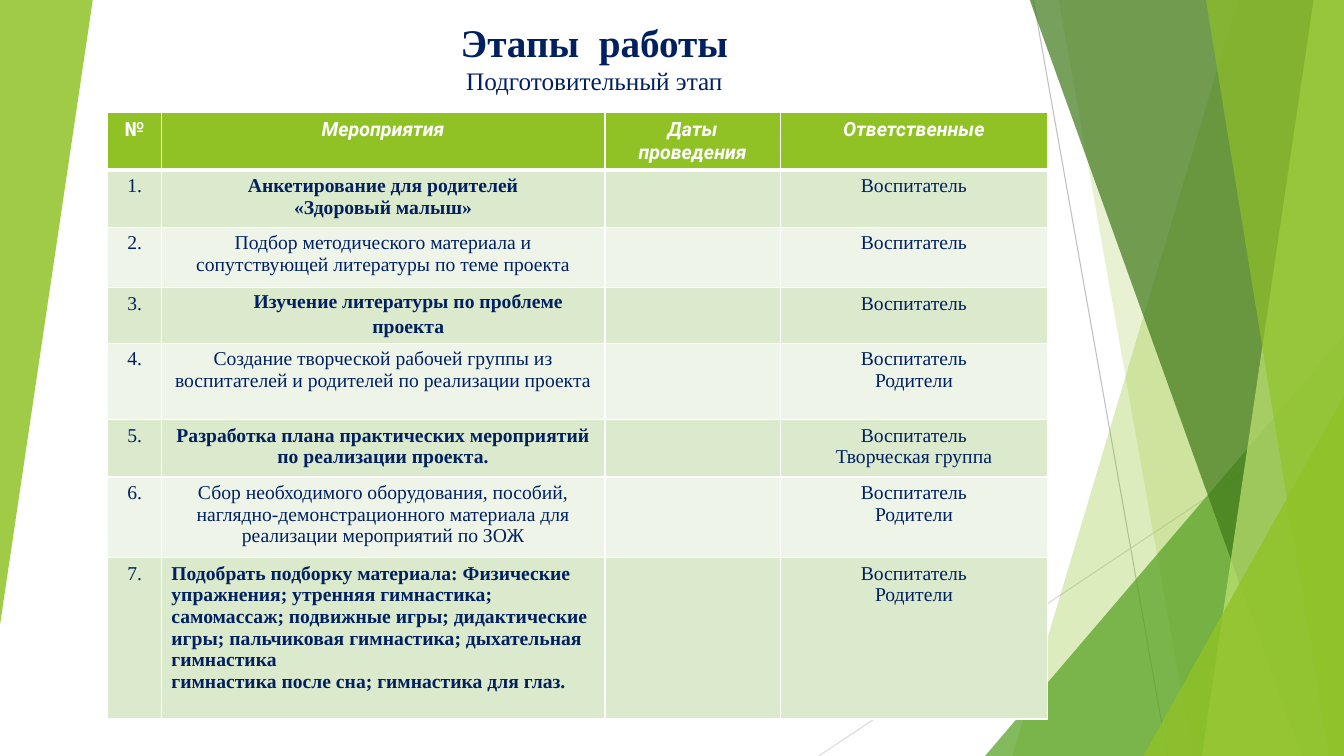
"""Build the project stages slide with its activity table."""
from dataclasses import dataclass

from lxml import etree
from pptx import Presentation
from pptx import util as u
from pptx.dml.color import RGBColor
from pptx.enum import shapes, text
from pptx.oxml import ns

WHITE = RGBColor(0xFF, 0xFF, 0xFF)
NAVY = RGBColor(0x00, 0x20, 0x60)
LIME = RGBColor(0x90, 0xC2, 0x26)
GREEN = RGBColor(0x54, 0xA0, 0x21)
FOREST = RGBColor(0x3F, 0x78, 0x19)
PALE_LIME = RGBColor(0xC0, 0xE4, 0x74)
SILVER = RGBColor(0xBF, 0xBF, 0xBF)
LIGHT_GREY = RGBColor(0xD9, 0xD9, 0xD9)
ODD_ROW = RGBColor(0xDB, 0xE9, 0xCD)
EVEN_ROW = RGBColor(0xEE, 0xF4, 0xE8)
SERIF = "Times New Roman"
WIDTH, HEIGHT = 13.33, 7.5
COLUMN_WIDTHS = (0.53, 4.4, 1.74, 2.65)
HEADER_HEIGHT = 0.56
HEADINGS = ("№", "Мероприятия", "Даты\nпроведения", "Ответственные")


@dataclass
class Ray:
    start: tuple[float, float]
    end: tuple[float, float]
    color: RGBColor


@dataclass
class Band:
    """Sloping strip that reaches the right edge of the slide."""
    top_left: float
    bottom_left: float
    color: RGBColor
    opacity: int


@dataclass
class Wedge:
    left: float
    top: float
    width: float
    height: float
    color: RGBColor
    opacity: int
    rotation: int = 0


@dataclass
class Activity:
    title: str
    people: str
    height: float


RAYS = (
    Ray((10.25, 0), (11.58, HEIGHT), SILVER),
    Ray((WIDTH, 4.03), (8.12, HEIGHT), LIGHT_GREY),
)
DECORATIONS = (
    Band(12.28, 10.04, LIME, 30),
    Band(10.5, 11.83, LIME, 20),
    Wedge(9.77, 3.33, 3.56, 4.17, GREEN, 72),
    Band(10.21, 12.91, FOREST, 70),
    Band(13.03, 11.92, PALE_LIME, 70),
    Band(11.96, 13.18, LIME, 65),
    Wedge(11.34, 3.93, 1.99, 3.57, LIME, 80),
    Wedge(0, 0, 0.92, 6.2, LIME, 85, 180),
)
ACTIVITIES = (
    Activity("Анкетирование для родителей\n«Здоровый малыш»", "Воспитатель", 0.53),
    Activity("Подбор методического материала и сопутствующей литературы "
             "по теме проекта", "Воспитатель", 0.6),
    Activity("Изучение литературы по проблеме проекта", "Воспитатель", 0.55),
    Activity("Создание творческой рабочей группы из воспитателей и родителей "
             "по реализации проекта", "Воспитатель\nРодители", 0.76),
    Activity("Разработка плана практических мероприятий по реализации проекта.",
             "Воспитатель\nТворческая группа", 0.53),
    Activity("Сбор необходимого оборудования, пособий, наглядно-демонстрационного "
             "материала для реализации мероприятий по ЗОЖ",
             "Воспитатель\nРодители", 0.75),
    Activity("Подобрать подборку материала: Физические упражнения; утренняя "
             "гимнастика; самомассаж; подвижные игры; дидактические игры; "
             "пальчиковая гимнастика; дыхательная гимнастика\v"
             "гимнастика после сна; гимнастика для глаз.",
             "Воспитатель\nРодители", 1.6),
)


def format_span(span, size: float, color: RGBColor, name: str = SERIF,
                bold: bool = False, italic: bool = False) -> None:
    """Set the font of one run."""
    span.font.size = u.Pt(size)
    span.font.name = name
    span.font.color.rgb = color
    span.font.bold = bold
    span.font.italic = italic


def draw_ray(page, ray: Ray) -> None:
    """Draw a thin background line."""
    points = [u.Inches(value) for value in (*ray.start, *ray.end)]
    line = page.shapes.add_connector(shapes.MSO_CONNECTOR.STRAIGHT, *points)
    line.line.color.rgb = ray.color
    line.line.width = u.Pt(0.75)
    etree.SubElement(line._element.spPr, ns.qn("a:effectLst"))


def draw_decoration(page, item: Band | Wedge) -> None:
    """Draw a translucent band or wedge."""
    if isinstance(item, Band):
        corners = [(item.top_left, -0.01), (WIDTH, -0.01),
                   (WIDTH, HEIGHT), (item.bottom_left, HEIGHT)]
        points = [(u.Inches(x), u.Inches(y)) for x, y in corners]
        builder = page.shapes.build_freeform(*points[0])
        builder.add_line_segments(points[1:], close=True)
        shape = builder.convert_to_shape()
    else:
        frame = (item.left, item.top, item.width, item.height)
        shape = page.shapes.add_shape(shapes.MSO_SHAPE.ISOSCELES_TRIANGLE,
                                      *map(u.Inches, frame))
        shape.adjustments[0] = 1
        shape.rotation = item.rotation
    shape.shadow.inherit = False
    shape.line.fill.background()
    shape.fill.solid()
    shape.fill.fore_color.rgb = item.color
    color = shape._element.spPr.find(".//" + ns.qn("a:srgbClr"))
    etree.SubElement(color, ns.qn("a:alpha"), val=str(item.opacity * 1000))


def draw_title(page) -> None:
    """Draw the heading and the stage name below it."""
    box = page.shapes.add_textbox(*map(u.Inches, (1.65, 0.3, 8.49, 0.7)))
    frame = box.text_frame
    frame.word_wrap = True
    frame.vertical_anchor = text.MSO_ANCHOR.BOTTOM
    para = frame.paragraphs[0]
    para.text = "Этапы  работы\vПодготовительный этап"
    para.alignment = text.PP_ALIGN.CENTER
    heading, stage = para.runs
    format_span(heading, 28, NAVY, bold=True)
    format_span(stage, 18, NAVY)


def add_borders(cell, top: float, bottom: float) -> None:
    """Give a cell white borders, widths in points."""
    properties = cell._tc.get_or_add_tcPr()
    for side, width in (("L", 1), ("R", 1), ("T", top), ("B", bottom)):
        line = etree.SubElement(properties, ns.qn(f"a:ln{side}"), w=str(u.Pt(width)))
        fill = etree.SubElement(line, ns.qn("a:solidFill"))
        etree.SubElement(fill, ns.qn("a:srgbClr"), val=str(WHITE))


def fill_cell(cell, content: str, row: int, column: int) -> None:
    """Write one cell and style it by its row and column."""
    header = row == 0
    add_borders(cell, 3 if row == 1 else 1, 3 if header else 1)
    cell.fill.solid()
    cell.fill.fore_color.rgb = LIME if header else ODD_ROW if row % 2 else EVEN_ROW
    cell.text_frame.text = content
    for para in cell.text_frame.paragraphs:
        para.alignment = text.PP_ALIGN.CENTER
        for span in para.runs:
            if header:
                format_span(span, 14, WHITE, "Roboto", True, column > 0)
            else:
                format_span(span, 14, NAVY, bold=column == 1 and row % 2 == 1)


def draw_table(page) -> None:
    """Draw the table of activities."""
    heights = [HEADER_HEIGHT] + [activity.height for activity in ACTIVITIES]
    frame = page.shapes.add_table(len(heights), len(COLUMN_WIDTHS), u.Inches(1.07),
                                  u.Inches(1.12), u.Inches(sum(COLUMN_WIDTHS)),
                                  u.Inches(sum(heights)))
    table = frame.table
    for column, width in zip(table.columns, COLUMN_WIDTHS):
        column.width = u.Inches(width)
    rows = [HEADINGS] + [(f"{number}.", activity.title, "", activity.people)
                         for number, activity in enumerate(ACTIVITIES, 1)]
    for row, (contents, height) in enumerate(zip(rows, heights)):
        table.rows[row].height = u.Inches(height)
        for column, content in enumerate(contents):
            fill_cell(table.cell(row, column), content, row, column)
    study = table.cell(3, 1)
    study.margin_left = study.margin_right = u.Inches(0.07)
    study.margin_top = study.margin_bottom = 0
    para = study.text_frame.paragraphs[0]
    para.line_spacing = 1.15
    para._p.get_or_add_pPr().set("marL", str(u.Inches(0.5)))
    table.cell(7, 1).text_frame.paragraphs[0].alignment = text.PP_ALIGN.LEFT


def main() -> None:
    """Assemble and save the deck."""
    deck = Presentation()
    deck.slide_width, deck.slide_height = u.Inches(WIDTH), u.Inches(HEIGHT)
    page = deck.slides.add_slide(deck.slide_layouts[6])
    for ray in RAYS:
        draw_ray(page, ray)
    for item in DECORATIONS:
        draw_decoration(page, item)
    draw_title(page)
    draw_table(page)
    deck.save("out.pptx")


if __name__ == "__main__":
    main()
